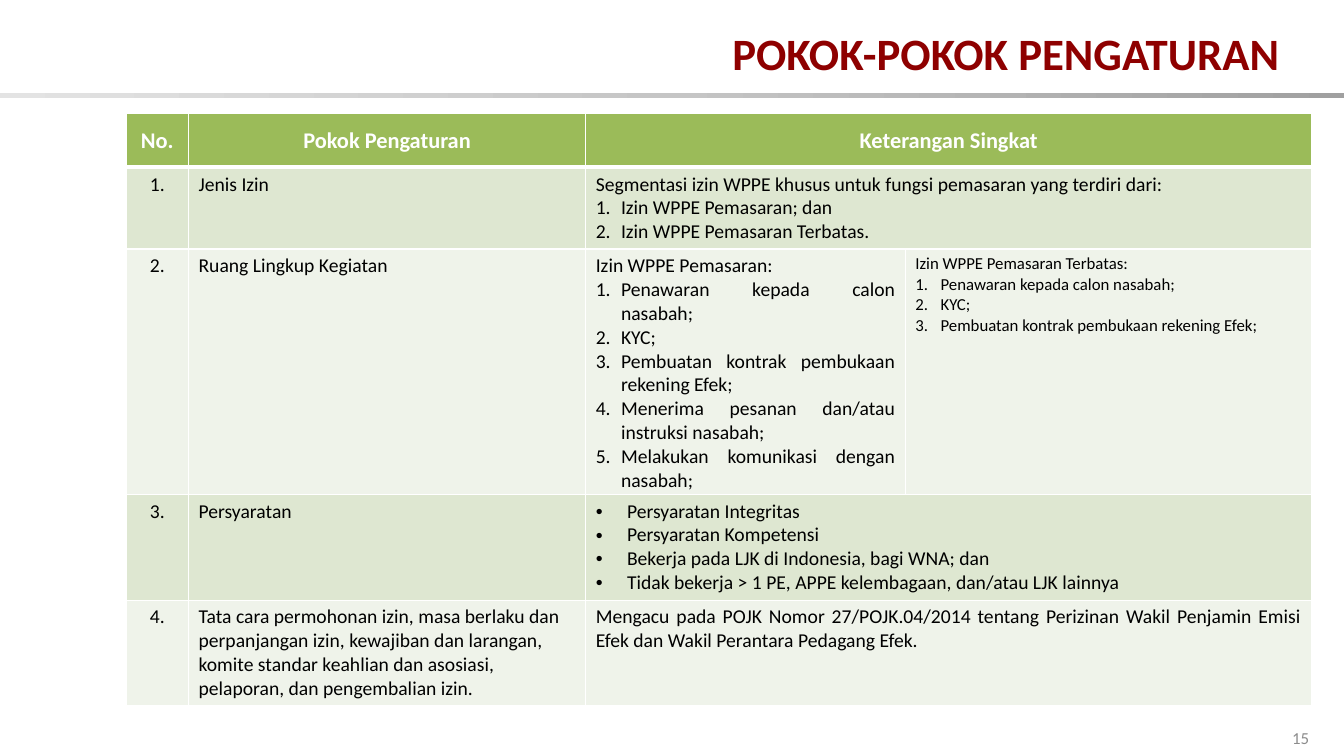
"""Build the slide that lists the main points of the regulation."""
from copy import deepcopy
from dataclasses import dataclass
from typing import Optional

from lxml.etree import SubElement
from pptx import Presentation
from pptx.dml.color import RGBColor
from pptx.enum.shapes import MSO_SHAPE as Shape
from pptx.enum.text import MSO_ANCHOR as Anchor, PP_ALIGN as Align
from pptx.oxml.ns import qn
from pptx.util import Inches, Pt

FONT = "Calibri"
WHITE = RGBColor(0xFF, 0xFF, 0xFF)
BLACK = RGBColor(0x00, 0x00, 0x00)
DARK_RED = RGBColor(0x8E, 0x00, 0x00)
GRAY = RGBColor(0x8C, 0x8C, 0x8C)
GREEN = RGBColor(0x9B, 0xBB, 0x59)
BANDS = (RGBColor(0xDE, 0xE7, 0xD1), RGBColor(0xEF, 0xF3, 0xEA))
RULE_COLORS = (RGBColor(0xE3, 0xE3, 0xE3), RGBColor(0xC5, 0xC5, 0xC5),
               RGBColor(0xA0, 0xA0, 0xA0))
COLUMN_WIDTHS = (0.62, 3.94, 3.17, 4.03)
ROW_HEIGHTS = (0.53, 0.81, 2.23, 1.05, 1.05)
HEADINGS = ("No.", "Pokok Pengaturan", "Keterangan Singkat")


@dataclass
class Line:
    text: str
    align: Align = Align.JUSTIFY
    indent: float = 0
    bullet: Optional[str] = None


@dataclass
class Topic:
    name: Line
    details: list[list[Line]]


def numbered(*texts: str) -> list[Line]:
    return [Line(text, indent=0.25, bullet="number") for text in texts]


def dotted(*texts: str) -> list[Line]:
    return [Line(text, indent=0.31, bullet="dot") for text in texts]


TOPICS = [
    Topic(Line("Jenis Izin", Align.LEFT), [
        [Line("Segmentasi izin WPPE khusus untuk fungsi pemasaran yang terdiri dari:"),
         *numbered("Izin WPPE Pemasaran; dan", "Izin WPPE Pemasaran Terbatas.")]]),
    Topic(Line("Ruang Lingkup Kegiatan"), [
        [Line("Izin WPPE Pemasaran:"),
         *numbered("Penawaran kepada calon nasabah;", "KYC;",
                   "Pembuatan kontrak pembukaan rekening Efek;",
                   "Menerima pesanan dan/atau instruksi nasabah;",
                   "Melakukan komunikasi dengan nasabah;")],
        [Line("Izin WPPE Pemasaran Terbatas:"),
         *numbered("Penawaran kepada calon nasabah;", "KYC;",
                   "Pembuatan kontrak pembukaan rekening Efek;")]]),
    Topic(Line("Persyaratan"), [
        dotted("Persyaratan Integritas", "Persyaratan Kompetensi",
               "Bekerja pada LJK di Indonesia, bagi WNA; dan",
               "Tidak bekerja > 1 PE, APPE kelembagaan, dan/atau LJK lainnya")]),
    Topic(Line("Tata cara permohonan izin, masa berlaku dan perpanjangan izin, "
               "kewajiban dan larangan, komite standar keahlian dan asosiasi, "
               "pelaporan, dan pengembalian izin.", Align.LEFT), [
        [Line("Mengacu pada POJK Nomor 27/POJK.04/2014 tentang Perizinan Wakil "
              "Penjamin Emisi Efek dan Wakil Perantara Pedagang Efek.")]]),
]


def write_text(frame, lines: list[Line], *, size: float = 14,
               color: RGBColor = BLACK, bold: bool = False) -> None:
    for index, line in enumerate(lines):
        paragraph = frame.add_paragraph() if index else frame.paragraphs[0]
        paragraph.alignment = line.align
        properties = paragraph._p.get_or_add_pPr()
        if line.indent:
            properties.set("marL", str(Inches(line.indent)))
            properties.set("indent", str(-Inches(line.indent)))
        if line.bullet == "number":
            SubElement(properties, qn("a:buFont"), typeface="+mj-lt")
            SubElement(properties, qn("a:buAutoNum"), type="arabicPeriod")
        elif line.bullet == "dot":
            SubElement(properties, qn("a:buFont"), typeface="Arial")
            SubElement(properties, qn("a:buChar"), char="•")
        run = paragraph.add_run()
        run.text = line.text
        run.font.name, run.font.size = FONT, Pt(size)
        run.font.bold, run.font.color.rgb = bold, color


def style_cell(cell, fill: RGBColor, top: float, bottom: float) -> None:
    properties = cell._tc.get_or_add_tcPr()
    for side, width in {"L": 1, "R": 1, "T": top, "B": bottom}.items():
        border = SubElement(properties, qn(f"a:ln{side}"), w=str(Pt(width)))
        solid = SubElement(border, qn("a:solidFill"))
        SubElement(solid, qn("a:srgbClr"), val=str(WHITE))
    cell.fill.solid()
    cell.fill.fore_color.rgb = fill


def add_box(slide, left: float, top: float, width: float, height: float):
    shape = slide.shapes.add_shape(Shape.RECTANGLE, Inches(left), Inches(top),
                                   Inches(width), Inches(height))
    shape.shadow.inherit = False
    shape.line.fill.background()
    return shape


def add_rule(slide) -> None:
    rule = add_box(slide, 0, 0.92, 13.33, 0.05)
    rule.fill.gradient()
    rule.fill.gradient_angle = 0
    stops = rule._element.find(".//" + qn("a:gsLst"))
    stops.insert(1, deepcopy(stops[0]))
    for index, stop in enumerate(rule.fill.gradient_stops):
        stop.position = index / 2
        stop.color.rgb = RULE_COLORS[index]


def add_title(slide) -> None:
    title = slide.shapes.add_textbox(Inches(5.24), Inches(0.15), Inches(7.55), Inches(0.75))
    title.text_frame.word_wrap = True
    title.text_frame.vertical_anchor = Anchor.MIDDLE
    write_text(title.text_frame, [Line("POKOK-POKOK PENGATURAN", Align.RIGHT)],
               size=32, color=DARK_RED, bold=True)


def add_topic_table(slide) -> None:
    table = slide.shapes.add_table(
        len(ROW_HEIGHTS), len(COLUMN_WIDTHS), Inches(1.25), Inches(1.13),
        Inches(sum(COLUMN_WIDTHS)), Inches(sum(ROW_HEIGHTS))).table
    for column, width in zip(table.columns, COLUMN_WIDTHS):
        column.width = Inches(width)
    for index, (row, height) in enumerate(zip(table.rows, ROW_HEIGHTS)):
        row.height = Inches(height)
        for cell in row.cells:
            style_cell(cell, BANDS[(index - 1) % 2] if index else GREEN,
                       3 if index == 1 else 1, 1 if index else 3)
    table.cell(0, 2).merge(table.cell(0, 3))
    for index, heading in enumerate(HEADINGS):
        cell = table.cell(0, index)
        cell.vertical_anchor = Anchor.MIDDLE
        write_text(cell.text_frame, [Line(heading, Align.CENTER)],
                   size=16, color=WHITE, bold=True)
    for number, topic in enumerate(TOPICS, 1):
        if len(topic.details) == 1:
            table.cell(number, 2).merge(table.cell(number, 3))
        write_text(table.cell(number, 0).text_frame,
                   [Line(f"{number}.", Align.CENTER, indent=0.25)])
        write_text(table.cell(number, 1).text_frame, [topic.name])
        for column, lines in enumerate(topic.details, 2):
            write_text(table.cell(number, column).text_frame, lines,
                       size=12 if column == 3 else 14)


def add_page_number(slide) -> None:
    box = add_box(slide, 12.67, 7.1, 0.46, 0.44)
    box.fill.solid()
    box.fill.fore_color.rgb = WHITE
    box.text_frame.vertical_anchor = Anchor.MIDDLE
    write_text(box.text_frame, [Line("15", Align.CENTER)], size=12, color=GRAY)


def main() -> None:
    presentation = Presentation()
    presentation.slide_width, presentation.slide_height = Inches(13.33), Inches(7.5)
    slide = presentation.slides.add_slide(presentation.slide_layouts[6])
    add_rule(slide)
    add_title(slide)
    add_topic_table(slide)
    add_page_number(slide)
    presentation.save("out.pptx")


if __name__ == "__main__":
    main()
